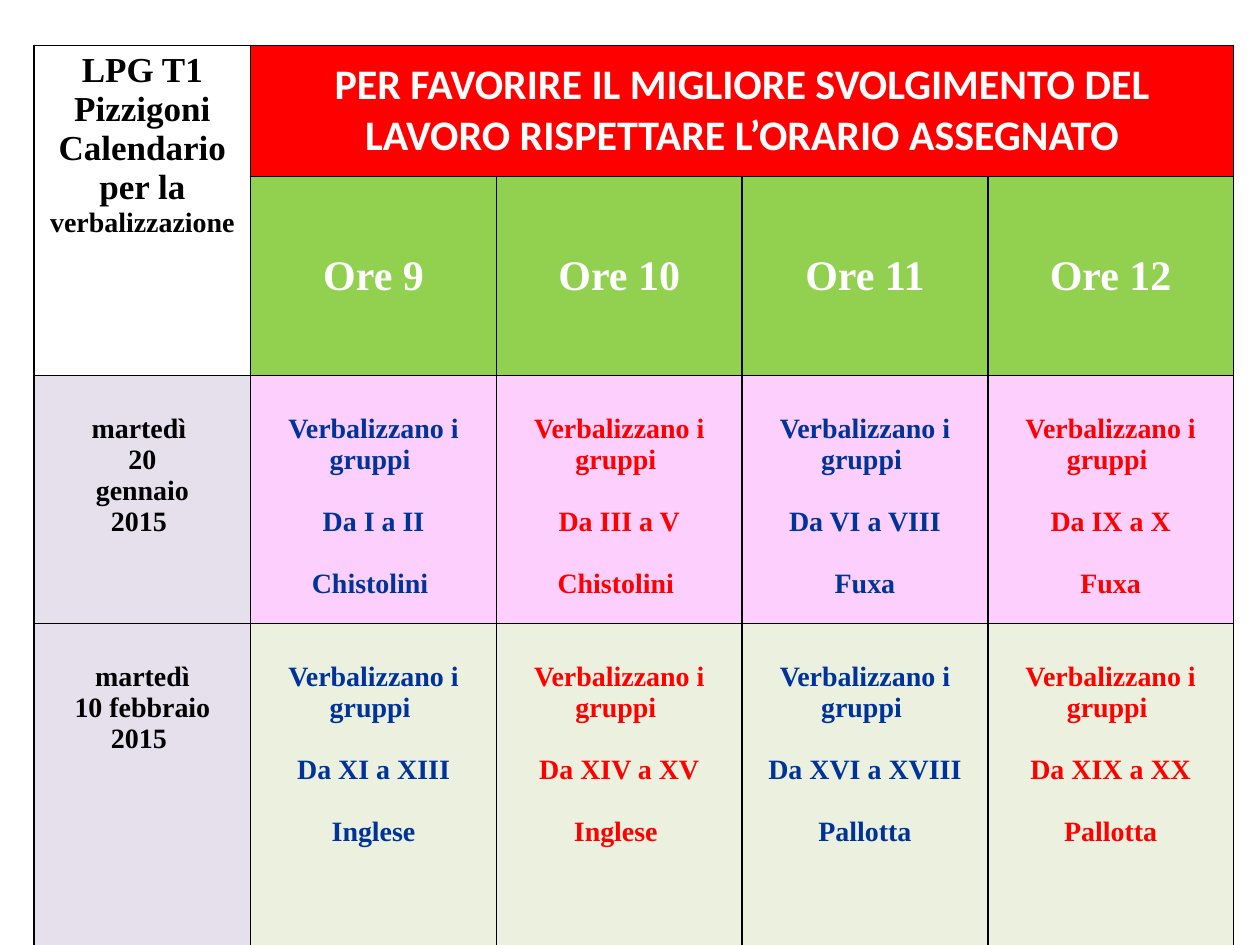
from lxml import etree
from pptx import Presentation
from pptx import util as u
from pptx.dml.color import RGBColor
from pptx.enum import text
from pptx.oxml.ns import qn

# Content
TITLE = [[("LPG T1 Pizzigoni", 20)],
         [("Calendario per la ", 20), ("verbalizzazione", 16)]]
NOTICE = "PER FAVORIRE IL MIGLIORE SVOLGIMENTO DEL LAVORO RISPETTARE L’ORARIO ASSEGNATO"
HOURS = ["Ore 9", "Ore 10", "Ore 11", "Ore 12"]
GROUPS = "Verbalizzano i gruppi "
DAYS = [
    (["martedì ", "20", " gennaio ", "2015 "], "FCCFFD",
     [("Da I a II", "Chistolini "), ("Da III a V", "Chistolini "),
      ("Da VI a VIII", "Fuxa"), ("Da IX a X", "Fuxa")]),
    (["martedì", "10 febbraio 2015 "], "EBF1DE",
     [("Da XI a XIII", "Inglese"), ("Da XIV a XV", "Inglese "),
      ("Da XVI a XVIII", "Pallotta"), ("Da XIX a XX", "Pallotta")]),
]

# Layout and colours
COLS = [1.72] + [1.95] * 4
ROWS = [1.04, 0.73, 1.97, 2.61]
LEFT, TOP = 0.27, 0.36
LINE_GAP = 17.7  # one line of 16 pt text
BLACK, WHITE, BLUE, RED = "000000", "FFFFFF", "003399", "FF0000"
GREEN, LILAC = "92D050", "E6E0EC"
SERIF, SANS = "Times New Roman", "Calibri"


def rgb(value):
    return RGBColor.from_string(value)


def add_borders(cell):
    tc_pr = cell._tc.get_or_add_tcPr()
    for i, side in enumerate(("lnL", "lnR", "lnT", "lnB")):
        ln = etree.Element(qn("a:" + side), w=str(u.Pt(1)))
        fill = etree.SubElement(ln, qn("a:solidFill"))
        etree.SubElement(fill, qn("a:srgbClr"), val=BLACK)
        tc_pr.insert(i, ln)


def fill_cell(cell, paragraphs, fill, color, font=SERIF, middle=False, top=0.05, gap=0):
    """Each paragraph is a list of (text, size) runs."""
    cell.fill.solid()
    cell.fill.fore_color.rgb = rgb(fill)
    cell.margin_top = u.Inches(top)
    anchor = text.MSO_ANCHOR
    cell.vertical_anchor = anchor.MIDDLE if middle else anchor.TOP
    tf = cell.text_frame
    for i, runs in enumerate(paragraphs):
        p = tf.add_paragraph() if i else tf.paragraphs[0]
        p.alignment = text.PP_ALIGN.CENTER
        if i and gap:
            p.space_before = u.Pt(gap)
        for words, size in runs:
            r = p.add_run()
            r.text = words
            for name, value in {"name": font, "size": u.Pt(size), "bold": True}.items():
                setattr(r.font, name, value)
            r.font.color.rgb = rgb(color)


def main():
    prs = Presentation()
    prs.slide_width, prs.slide_height = u.Inches(10), u.Inches(7.5)
    s = prs.slides.add_slide(prs.slide_layouts[6])

    # Table grid
    table = s.shapes.add_table(len(ROWS), len(COLS), u.Inches(LEFT), u.Inches(TOP),
                               u.Inches(sum(COLS)), u.Inches(sum(ROWS))).table
    for column, width in zip(table.columns, COLS):
        column.width = u.Inches(width)
    for row, height in zip(table.rows, ROWS):
        row.height = u.Inches(height)
    table.cell(0, 0).merge(table.cell(1, 0))
    table.cell(0, 1).merge(table.cell(0, 4))

    # Headings
    fill_cell(table.cell(0, 0), TITLE, WHITE, BLACK)
    fill_cell(table.cell(0, 1), [[(NOTICE, 24)]], RED, WHITE, SANS, middle=True)
    for c, hour in enumerate(HOURS, 1):
        fill_cell(table.cell(1, c), [[(hour, 24)]], GREEN, WHITE, middle=True)

    # One row per day, text starting one line down
    for r, (date, fill, slots) in enumerate(DAYS, 2):
        fill_cell(table.cell(r, 0), [[(line, 16)] for line in date], LILAC, BLACK, top=0.3)
        for c, (span, teacher) in enumerate(slots, 1):
            lines = [[(line, 16)] for line in (GROUPS, span, teacher)]
            fill_cell(table.cell(r, c), lines, fill, BLUE if c % 2 else RED,
                      top=0.3, gap=LINE_GAP)

    for cell in table.iter_cells():
        add_borders(cell)
    prs.save("out.pptx")


if __name__ == "__main__":
    main()
